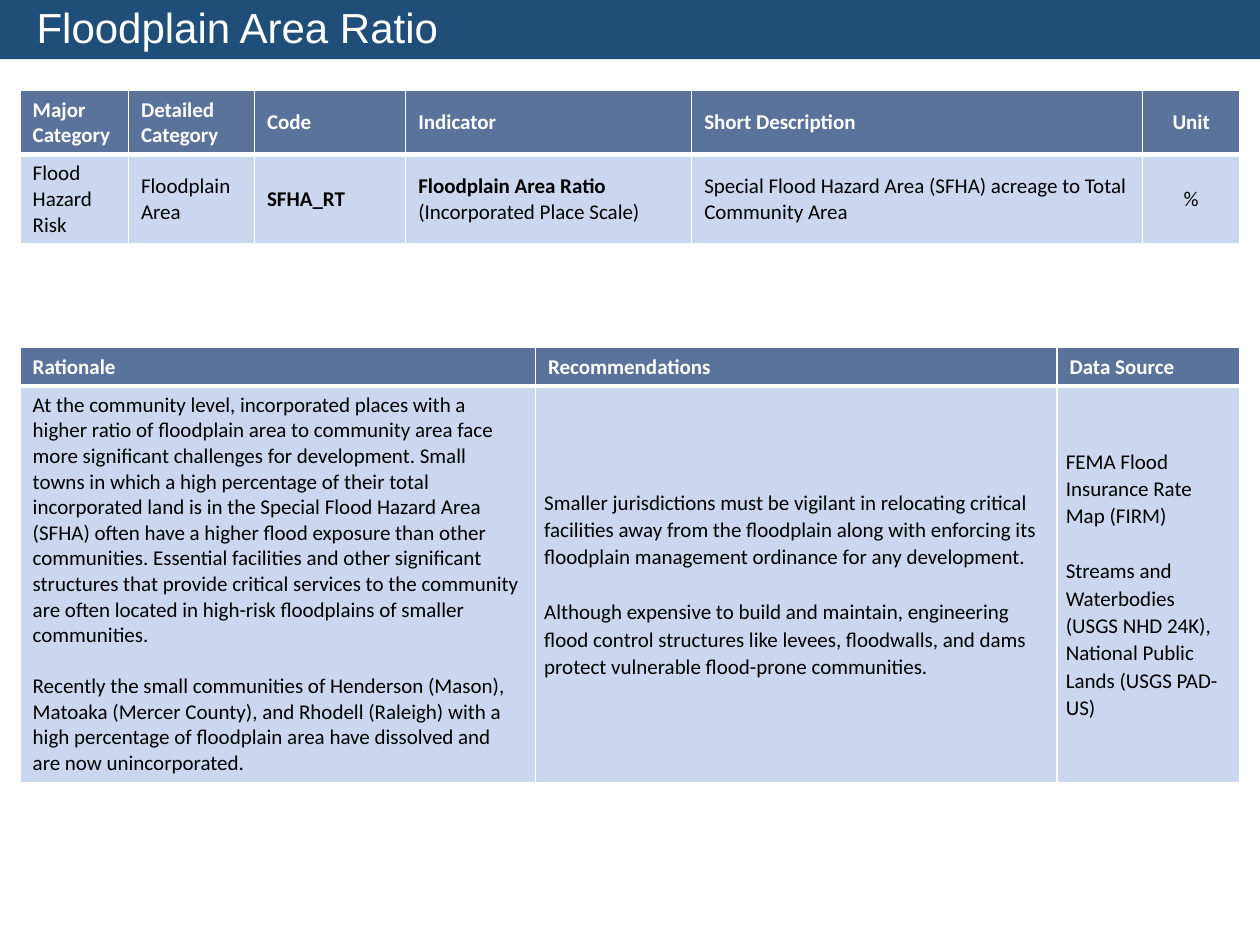
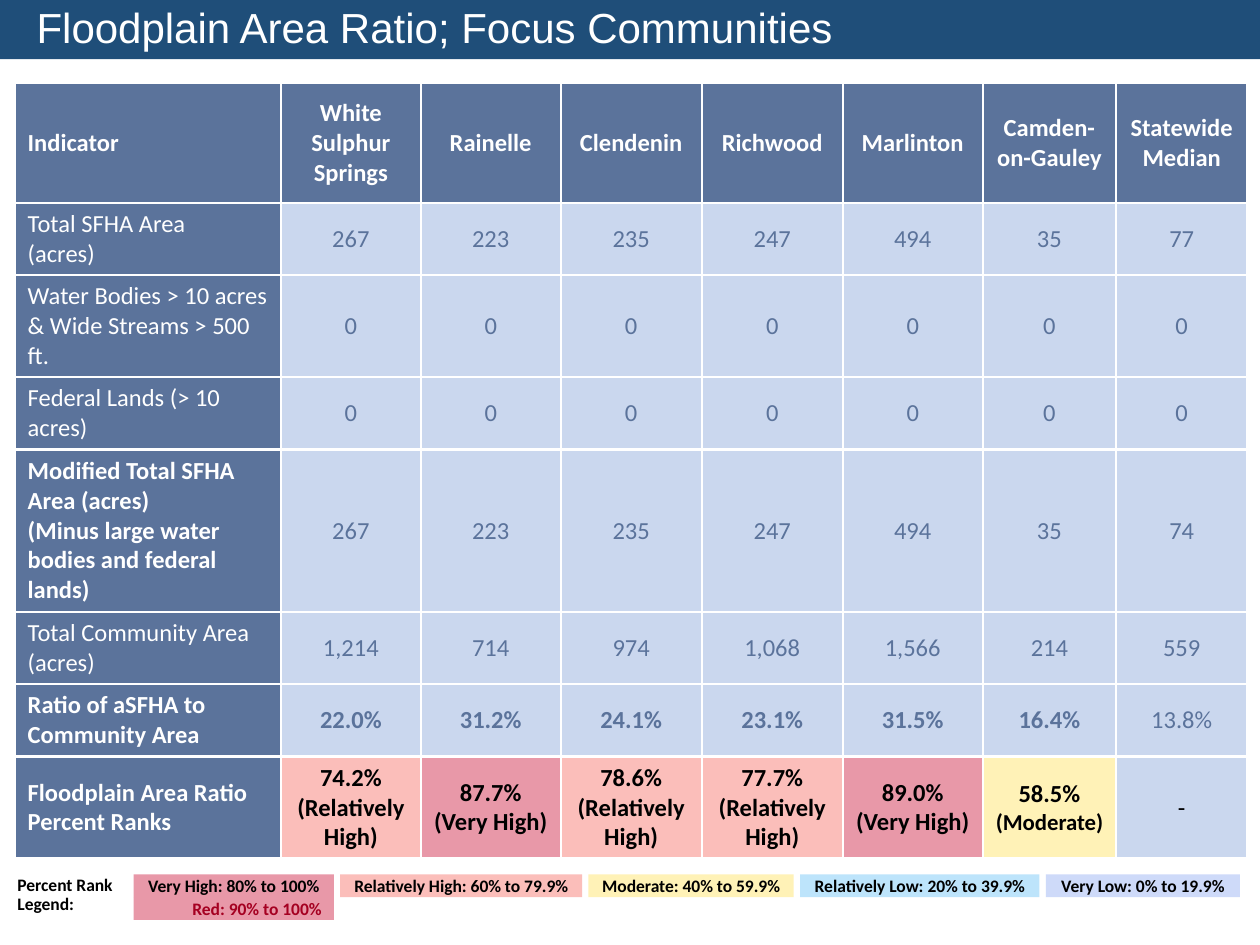
from dataclasses import dataclass

from lxml import etree
from pptx import Presentation
from pptx.dml.color import RGBColor
from pptx.enum import shapes, text
from pptx.oxml import ns
from pptx.util import Inches, Pt

ALIGN = text.PP_ALIGN
MIDDLE = text.MSO_ANCHOR.MIDDLE


@dataclass(frozen=True)
class Theme:
    band: str = "1F4E79"
    header: str = "5B739B"
    cell: str = "CAD7EE"
    white: str = "FFFFFF"
    black: str = "000000"
    alert: str = "A50021"
    very_high: str = "E898A8"
    high: str = "FBBEBA"
    moderate: str = "FFF2B7"
    low: str = "BDE4FB"
    very_low: str = "CEDAF9"
    title_font: str = "Arial"
    body_font: str = "Calibri"
    title_size: int = 24
    matrix_size: int = 14
    rank_note_size: int = 13
    body_size: int = 12
    legend_size: int = 10


THEME = Theme()

INDICATOR_HEADERS = ["Major Category", "Detailed Category", "Code", "Indicator",
                     "Short Description", "Unit"]
INDICATOR_VALUES = ["Flood Hazard Risk", "Floodplain Area", "SFHA_RT",
                    "Floodplain Area Ratio\n(Incorporated Place Scale)",
                    "Special Flood Hazard Area (SFHA) acreage to Total Community Area", "%"]

RATIONALE_HEADERS = ["Rationale", "Recommendations", "Data Source"]
RATIONALE_VALUES = [
    "At the community level, incorporated places with a higher ratio of floodplain area to "
    "community area face more significant challenges for development. Small towns in which a "
    "high percentage of their total incorporated land is in the Special Flood Hazard Area (SFHA) "
    "often have a higher flood exposure than other communities. Essential facilities and other "
    "significant structures that provide critical services to the community are often located in "
    "high-risk floodplains of smaller communities.\n"
    "Recently the small communities of Henderson (Mason), Matoaka (Mercer County), and Rhodell "
    "(Raleigh) with a high percentage of floodplain area have dissolved and are now "
    "unincorporated.",
    "Smaller jurisdictions must be vigilant in relocating critical facilities away from the "
    "floodplain along with enforcing its floodplain management ordinance for any development.\n"
    "Although expensive to build and maintain, engineering flood control structures like levees, "
    "floodwalls, and dams protect vulnerable flood-prone communities.",
    "FEMA Flood Insurance Rate Map (FIRM)\n"
    "Streams and Waterbodies (USGS NHD 24K), National Public Lands (USGS PAD-US)",
]

COMMUNITY_HEADERS = ["Indicator", "White Sulphur Springs", "Rainelle", "Clendenin", "Richwood",
                     "Marlinton", "Camden-on-Gauley", "Statewide\nMedian"]
COMMUNITY_ROWS = [
    ["Total SFHA Area\n(acres)", "267", "223", "235", "247", "494", "35", "77"],
    ["Water Bodies > 10 acres & Wide Streams > 500 ft."] + ["0"] * 7,
    ["Federal Lands (> 10 acres)"] + ["0"] * 7,
    ["Modified Total SFHA Area (acres)\n(Minus large water bodies and federal lands)",
     "267", "223", "235", "247", "494", "35", "74"],
    ["Total Community Area (acres)", "1,214", "714", "974", "1,068", "1,566", "214", "559"],
    ["Ratio of aSFHA to Community Area",
     "22.0%", "31.2%", "24.1%", "23.1%", "31.5%", "16.4%", "13.8%"],
]
RANK_LABEL = "Floodplain Area Ratio Percent Ranks"
RANKS = [("74.2%", "Relatively High"), ("87.7%", "Very High"), ("78.6%", "Relatively High"),
         ("77.7%", "Relatively High"), ("89.0%", "Very High"), ("58.5%", "Moderate")]
RANK_FILLS = {"Very High": THEME.very_high, "Relatively High": THEME.high,
              "Moderate": THEME.moderate}
BOLD_LABEL_ROWS = (4, 6)
RATIO_ROW = 6
RANK_ROW = 7

LEGEND = [("Very High: 80% to 100%", 1.59, THEME.very_high),
          ("Relatively High: 60% to 79.9%", 1.92, THEME.high),
          ("Moderate: 40% to 59.9%", 1.63, THEME.moderate),
          ("Relatively Low: 20% to 39.9%", 1.9, THEME.low),
          ("Very Low: 0% to 19.9%", 1.54, THEME.very_low)]


def paint(fill, color):
    fill.solid()
    fill.fore_color.rgb = RGBColor.from_string(color)


def place(shape, left, top, width, height):
    shape.left, shape.top = Inches(left), Inches(top)
    shape.width, shape.height = Inches(width), Inches(height)


def write(frame, content, size, color, bold=False, align=ALIGN.LEFT, font=THEME.body_font):
    frame.text = content
    for paragraph in frame.paragraphs:
        paragraph.alignment = align
        paragraph.font.name = font
        paragraph.font.size = Pt(size)
        paragraph.font.bold = bold
        paragraph.font.color.rgb = RGBColor.from_string(color)


def set_borders(cell, left, right, top, bottom):
    properties = cell._tc.get_or_add_tcPr()
    for index, (side, width) in enumerate(zip("LRTB", (left, right, top, bottom))):
        line = etree.Element(ns.qn(f"a:ln{side}"), w=str(Pt(width)))
        fill = etree.SubElement(line, ns.qn("a:solidFill"))
        etree.SubElement(fill, ns.qn("a:srgbClr"), val=THEME.white)
        properties.insert(index, line)


def fill_cell(cell, content, fill, size, color, bold=False, align=ALIGN.LEFT):
    paint(cell.fill, fill)
    cell.vertical_anchor = MIDDLE
    write(cell.text_frame, content, size, color, bold, align)


def add_table(slide, left, top, widths, heights):
    frame = slide.shapes.add_table(len(heights), len(widths), Inches(left), Inches(top),
                                   Inches(sum(widths)), Inches(sum(heights)))
    table = frame.table
    for column, width in zip(table.columns, widths):
        column.width = Inches(width)
    for row, height in zip(table.rows, heights):
        row.height = Inches(height)
    return table


def add_detail_table(slide, top, widths, heights, headers, values):
    table = add_table(slide, 0.16, top, widths, heights)
    for column, (header, value) in enumerate(zip(headers, values)):
        align = ALIGN.CENTER if header == "Unit" else ALIGN.LEFT
        head, body = table.cell(0, column), table.cell(1, column)
        fill_cell(head, header, THEME.header, THEME.body_size, THEME.white, True, align)
        fill_cell(body, value, THEME.cell, THEME.body_size, THEME.black, header == "Code", align)
        set_borders(head, 1, 1, 1, 3)
        set_borders(body, 1, 1, 3, 1)
    return table


def add_rationale_table(slide):
    table = add_detail_table(slide, 2.76, [4.09, 4.14, 1.45], [0.3, 3.14],
                             RATIONALE_HEADERS, RATIONALE_VALUES)
    for column in range(3):
        cell = table.cell(1, column)
        first, second = cell.text_frame.paragraphs
        second.space_before = Pt(14.6)
        if column:
            cell.margin_left = cell.margin_right = Inches(0.07)
            cell.margin_top = cell.margin_bottom = 0
            first.line_spacing = second.line_spacing = 1.07
            second.space_before = Pt(15.7)


def add_community_table(slide):
    table = add_table(slide, 0.12, 0.66, [2.11, 1.11, 1.11, 1.12, 1.12, 1.11, 1.06, 1.04],
                      [0.95, 0.57, 0.81, 0.57, 1.29, 0.57, 0.57, 0.8])
    size = THEME.matrix_size
    for column, header in enumerate(COMMUNITY_HEADERS):
        align = ALIGN.CENTER if column else ALIGN.LEFT
        fill_cell(table.cell(0, column), header, THEME.header, size, THEME.white, True, align)
    for row, (label, *values) in enumerate(COMMUNITY_ROWS, 1):
        fill_cell(table.cell(row, 0), label, THEME.header, size, THEME.white,
                  row in BOLD_LABEL_ROWS)
        for column, value in enumerate(values, 1):
            bold = row == RATIO_ROW and column < len(values)
            fill_cell(table.cell(row, column), value, THEME.cell, size, THEME.header, bold,
                      ALIGN.CENTER)
    fill_cell(table.cell(RANK_ROW, 0), RANK_LABEL, THEME.header, size, THEME.white, True)
    for column, (percent, rank) in enumerate(RANKS, 1):
        cell = table.cell(RANK_ROW, column)
        fill_cell(cell, f"{percent}\n({rank})", RANK_FILLS[rank], size, THEME.black, True,
                  ALIGN.CENTER)
        if rank == "Moderate":
            cell.text_frame.paragraphs[1].font.size = Pt(THEME.rank_note_size)
    fill_cell(table.cell(RANK_ROW, 7), "-", THEME.cell, size, THEME.black, align=ALIGN.CENTER)
    for cell in table.iter_cells():
        set_borders(cell, 1.5, 1.5, 1.5, 1.5)


def add_legend_box(slide, left, top, width, content, fill, color=THEME.black,
                   align=ALIGN.CENTER):
    shape = slide.shapes.add_shape(shapes.MSO_SHAPE.RECTANGLE, Inches(left), Inches(top),
                                   Inches(width), Inches(0.18))
    shape.shadow.inherit = False
    shape.line.fill.background()
    paint(shape.fill, fill)
    frame = shape.text_frame
    frame.word_wrap = True
    frame.vertical_anchor = MIDDLE
    frame.margin_top = frame.margin_bottom = 0
    write(frame, content, THEME.legend_size, color, True, align)


def add_legend(slide):
    start, top, gap = 1.06, 6.94, 0.05
    left = start
    for content, width, fill in LEGEND:
        add_legend_box(slide, left, top, width, content, fill)
        left += width + gap
    add_legend_box(slide, start, top + 0.18, LEGEND[0][1], "Red: 90% to 100%", THEME.very_high,
                   THEME.alert, ALIGN.RIGHT)
    caption = slide.shapes.add_textbox(Inches(0.04), Inches(6.91), Inches(1.05), Inches(0.38))
    caption.text_frame.word_wrap = True
    write(caption.text_frame, "Percent Rank Legend:", THEME.legend_size, THEME.black, True)
    caption.text_frame.paragraphs[0].line_spacing = 0.9


def add_titled_slide(presentation, title):
    slide = presentation.slides.add_slide(presentation.slide_layouts[5])
    band = slide.shapes.title
    place(band, 0, 0, 10, 0.47)
    paint(band.fill, THEME.band)
    frame = band.text_frame
    frame.auto_size = text.MSO_AUTO_SIZE.NONE
    frame.vertical_anchor = text.MSO_ANCHOR.BOTTOM
    frame.margin_left = Inches(0.29)
    write(frame, title, THEME.title_size, THEME.white, font=THEME.title_font)
    frame.paragraphs[0].line_spacing = 0.9
    return slide


def main():
    presentation = Presentation()
    presentation.slide_width, presentation.slide_height = Inches(10), Inches(7.5)

    overview = add_titled_slide(presentation, "Floodplain Area Ratio")
    indicator = add_detail_table(overview, 0.72, [0.86, 1, 1.2, 2.27, 3.58, 0.77], [0.5, 0.7],
                                 INDICATOR_HEADERS, INDICATOR_VALUES)
    indicator.cell(1, 3).text_frame.paragraphs[0].font.bold = True
    add_rationale_table(overview)

    communities = add_titled_slide(presentation, "Floodplain Area Ratio; Focus Communities")
    add_community_table(communities)
    add_legend(communities)

    presentation.save("out.pptx")


if __name__ == "__main__":
    main()
